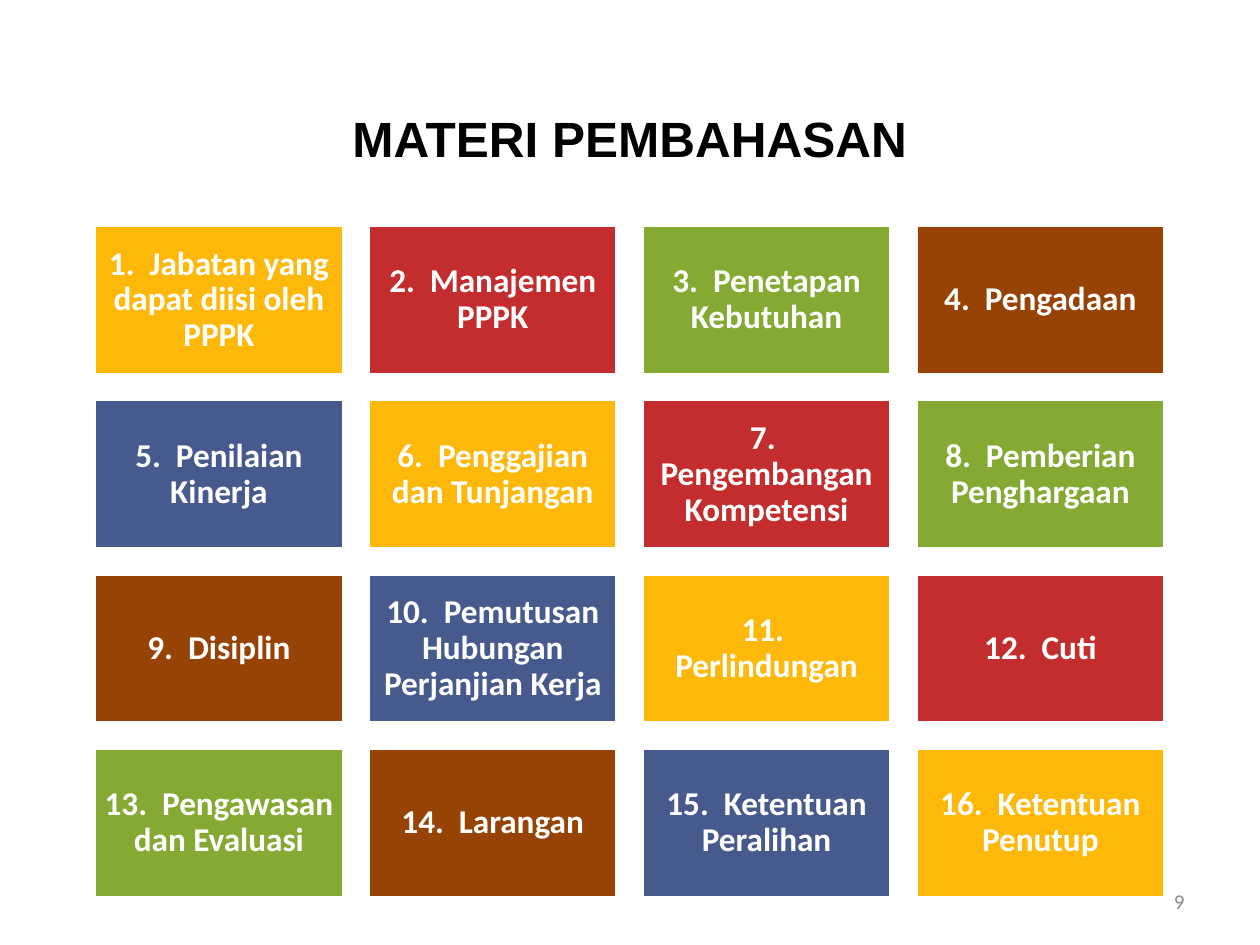
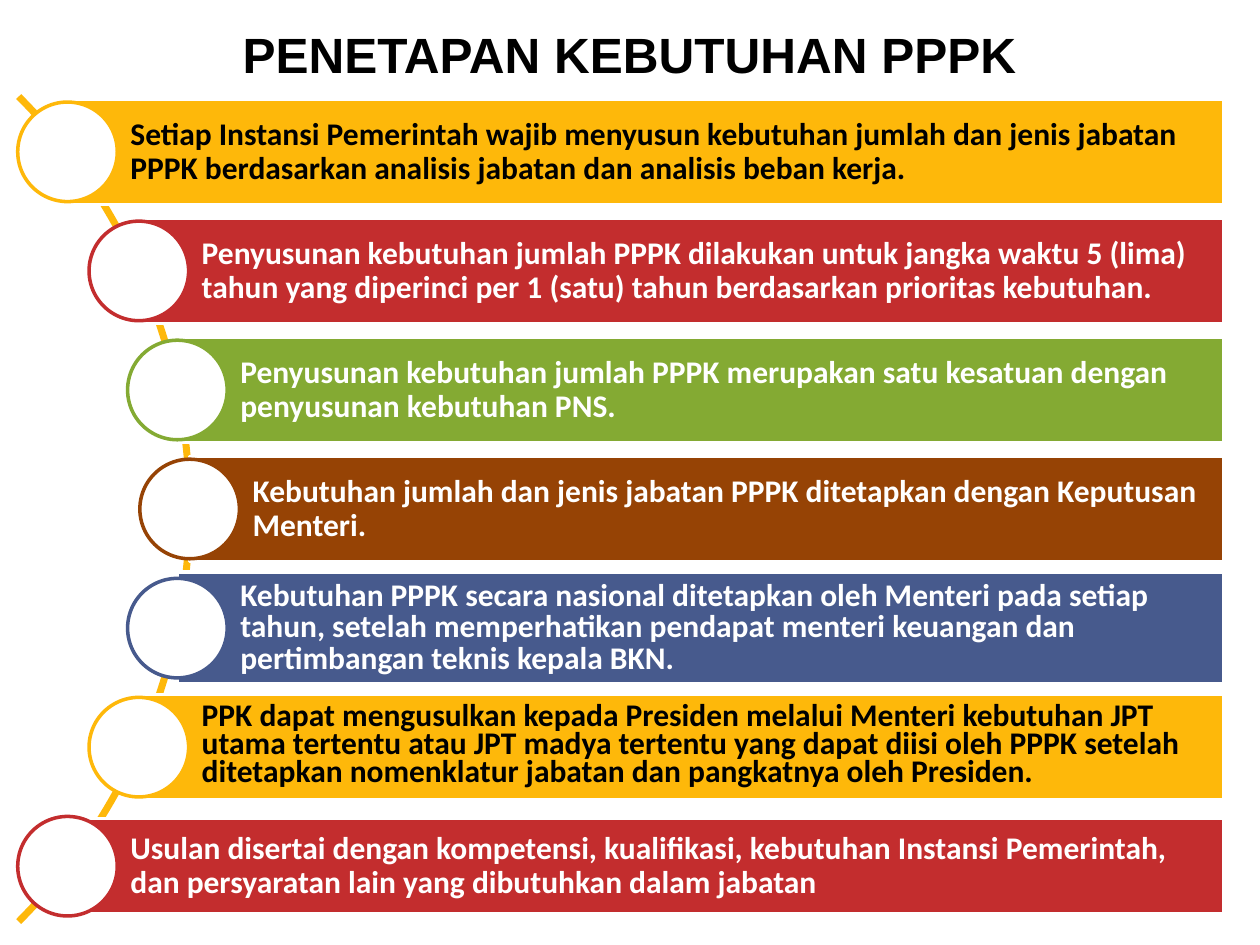
from dataclasses import dataclass
from math import cos, radians, sin, sqrt
from pptx import Presentation
from pptx.dml.color import RGBColor as Rgb
from pptx.enum.shapes import MSO_SHAPE as Kind
from pptx.enum.text import MSO_ANCHOR as Anchor, PP_ALIGN as Align
from pptx.util import Inches, Pt


@dataclass(frozen=True)
class Theme:
    hues: tuple = ("FEB80A", "C32D2E", "84AA33", "964305", "475A8D")
    white: str = "FFFFFF"
    black: str = "000000"
    gray: str = "898989"
    edge: float = 2
    arc: float = 4
    title: tuple = ("Arial", 28.3, True)
    cell: tuple = ("Calibri", 19, True)
    bar: tuple = ("Calibri", 18, True)
    page: tuple = ("Calibri", 12, False)


look = Theme()
deck = Presentation()
deck.slide_width, deck.slide_height = Inches(10), Inches(7.5)
unit = deck.slide_width / 100


def draw(slide, kind, at, fill=None, line=None):
    shape = slide.shapes.add_shape(kind, *(round(n * unit) for n in at))
    shape.shadow.inherit = False
    for part, hue in ((shape.fill, fill), (shape.line.fill, line)):
        if hue:
            part.solid()
            part.fore_color.rgb = Rgb.from_string(hue)
        else:
            part.background()
    if line:
        shape.line.width = Pt(look.edge)
    return shape


def write(shape, text, style, hue, align, pads=(1, 0.5, 1, 0.5), space=None):
    frame = shape.text_frame
    para = frame.paragraphs[0]
    run = para.add_run()
    run.text = text
    sides = ("margin_left", "margin_top", "margin_right", "margin_bottom")
    name, size, bold = style
    formats = (
        (frame, {"word_wrap": True, "vertical_anchor": Anchor.MIDDLE}),
        (frame, {side: round(pad * unit) for side, pad in zip(sides, pads)}),
        (para, {"alignment": align, "line_spacing": space}),
        (run.font, {"name": name, "size": Pt(size), "bold": bold}),
        (run.font.color, {"rgb": Rgb.from_string(hue)}),
    )
    for item, values in formats:
        for key, value in values.items():
            setattr(item, key, value)


slides = []
for title, top in (("MATERI PEMBAHASAN", 8), ("PENETAPAN KEBUTUHAN PPPK", 1.3)):
    slide = deck.slides.add_slide(deck.slide_layouts[6])
    head = draw(slide, Kind.RECTANGLE, (5, top, 90, 5.9))
    write(head, title, look.title, look.black, Align.CENTER)
    slides.append(slide)
topics, needs = slides

page = draw(topics, Kind.RECTANGLE, (71.7, 69.5, 23.3, 4))
write(page, "9", look.page, look.gray, Align.RIGHT)

names = (
    "Jabatan yang dapat diisi oleh PPPK", "Manajemen PPPK",
    "Penetapan Kebutuhan", "Pengadaan",
    "Penilaian Kinerja", "Penggajian dan Tunjangan",
    "Pengembangan Kompetensi", "Pemberian Penghargaan",
    "Disiplin", "Pemutusan Hubungan Perjanjian Kerja",
    "Perlindungan", "Cuti",
    "Pengawasan dan Evaluasi", "Larangan",
    "Ketentuan Peralihan", "Ketentuan Penutup",
)
for i, name in enumerate(names):
    row, col = divmod(i, 4)
    at = (7.5 + 21.73 * col, 17.9 + 13.83 * row, 19.75, 11.85)
    cell = draw(topics, Kind.RECTANGLE, at, look.hues[i % 5], look.white)
    write(cell, f"{i + 1}.  {name}", look.cell, look.white, Align.CENTER, (0.8,) * 4, 0.9)

hub, mid, reach = -31.25, 40.4, 46.3
curve = [
    (round((hub + reach * cos(radians(a))) * unit), round((mid + reach * sin(radians(a))) * unit))
    for a in range(-45, 46)
]
pen = needs.shapes.build_freeform(*curve[0])
pen.add_line_segments(curve[1:], close=False)
arc = pen.convert_to_shape()
arc.shadow.inherit = False
arc.fill.background()
arc.line.color.rgb = Rgb.from_string(look.hues[0])
arc.line.width = Pt(look.arc)

rules = (
    ("Setiap Instansi Pemerintah wajib menyusun kebutuhan jumlah dan jenis jabatan PPPK berdasarkan analisis jabatan dan analisis beban kerja.", 8.35, 0.9),
    ("Penyusunan kebutuhan jumlah PPPK dilakukan untuk jangka waktu 5 (lima) tahun yang diperinci per 1 (satu) tahun berdasarkan prioritas kebutuhan.", 8.35, 0.9),
    ("Penyusunan kebutuhan jumlah PPPK merupakan satu kesatuan dengan penyusunan kebutuhan PNS.", 8.35, 0.9),
    ("Kebutuhan jumlah dan jenis jabatan PPPK ditetapkan dengan Keputusan Menteri.", 8.35, 0.9),
    ("Kebutuhan PPPK secara nasional ditetapkan oleh Menteri pada setiap tahun, setelah memperhatikan pendapat menteri keuangan dan pertimbangan teknis kepala BKN.", 8.9, Pt(18)),
    ("PPK dapat mengusulkan kepada Presiden melalui Menteri kebutuhan JPT utama tertentu atau JPT madya tertentu yang dapat diisi oleh PPPK setelah ditetapkan nomenklatur jabatan dan pangkatnya oleh Presiden.", 8.35, Pt(16)),
    ("Usulan disertai dengan kompetensi, kualifikasi, kebutuhan Instansi Pemerintah, dan persyaratan lain yang dibutuhkan dalam jabatan", 7.6, 0.9),
)
right, dot = 97.15, 7.9
for i, (text, tall, space) in enumerate(rules):
    y = mid + 9.45 * (i - 3)
    x = hub + sqrt(reach ** 2 - (y - mid) ** 2)
    hue = look.hues[i % 5]
    ink = look.black if hue == look.hues[0] else look.white
    bar = draw(needs, Kind.RECTANGLE, (x, y - tall / 2, right - x, tall), hue, look.white)
    write(bar, text, look.bar, ink, Align.LEFT, (5, 0.5, 0.5, 0.5), space)
    draw(needs, Kind.OVAL, (x - dot / 2, y - dot / 2, dot, dot), look.white, hue)

deck.save("out.pptx")
